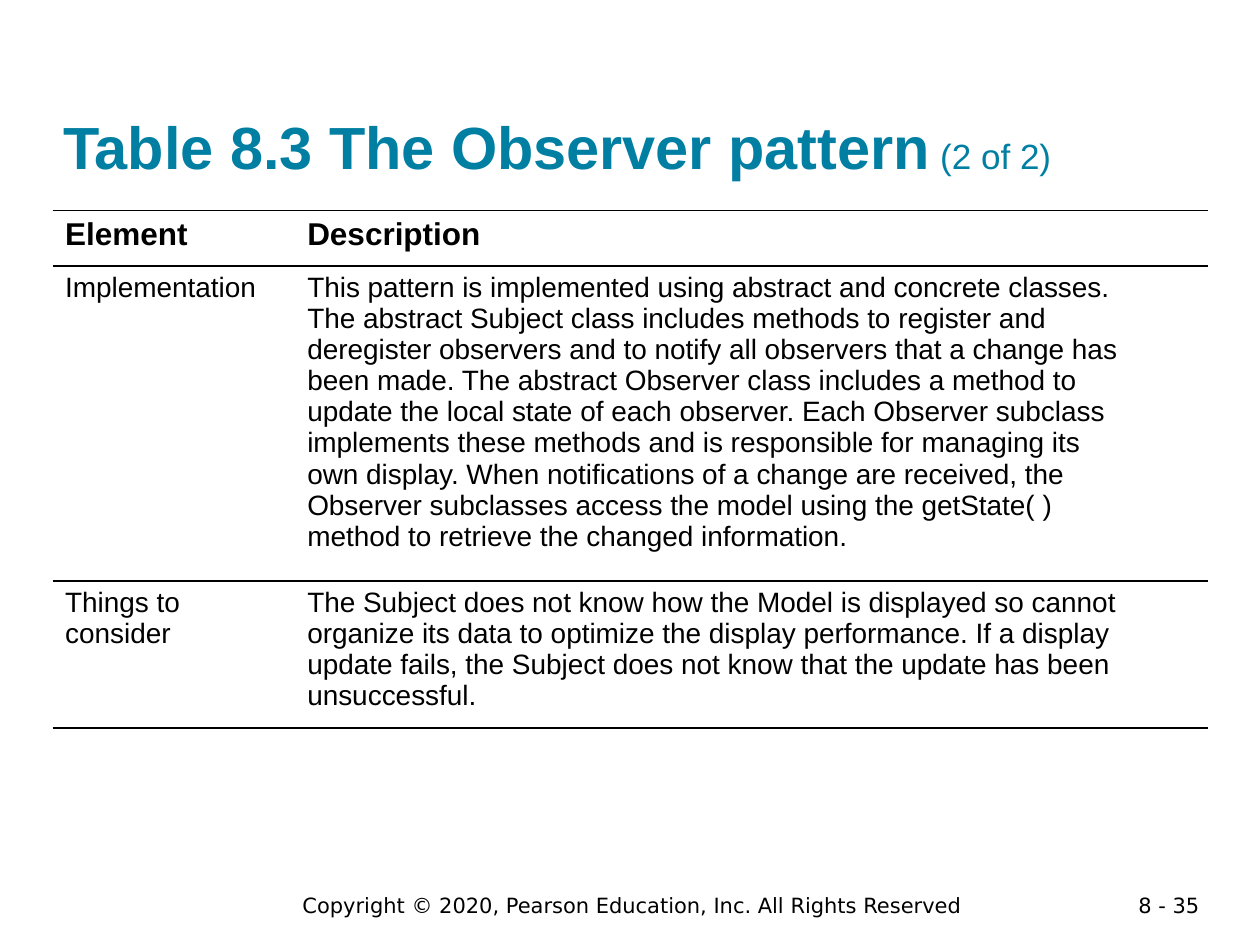
from lxml.etree import SubElement
from pptx import Presentation
from pptx.dml.color import RGBColor
from pptx.enum.text import MSO_ANCHOR as ANCHOR, MSO_AUTO_SIZE as FIT, PP_ALIGN as ALIGN
from pptx.oxml.ns import qn
from pptx.util import Cm, Pt

BLACK = RGBColor(0x00, 0x00, 0x00)
TEAL = RGBColor(0x00, 0x7F, 0xA3)

COL_WIDTHS = [4.88, 18.41]
ROW_HEIGHTS = [1.12, 5.9, 2.76]
ROWS = [
    (["Element"], ["Description"]),
    (["Implementation"], [
        "This pattern is implemented using abstract and concrete classes.",
        "The abstract Subject class includes methods to register and",
        "deregister observers and to notify all observers that a change has",
        "been made. The abstract Observer class includes a method to",
        "update the local state of each observer. Each Observer subclass",
        "implements these methods and is responsible for managing its",
        "own display. When notifications of a change are received, the",
        "Observer subclasses access the model using the getState( )",
        "method to retrieve the changed information.",
    ]),
    (["Things to consider"], [
        "The Subject does not know how the Model is displayed so cannot",
        "organize its data to optimize the display performance. If a display",
        "update fails, the Subject does not know that the update has been",
        "unsuccessful.",
    ]),
]


def add_text(p, text, size=16, font="Arial", color=BLACK, bold=False, align=ALIGN.LEFT):
    p.alignment = align
    r = p.add_run()
    r.text = text
    r.font.size = Pt(size)
    r.font.name = font
    r.font.bold = bold
    r.font.color.rgb = color


def set_title(s):
    title = s.shapes.title
    title.left, title.top, title.width, title.height = Cm(1.27), Cm(0.61), Cm(22.86), Cm(3.05)
    tf = title.text_frame
    tf.auto_size = FIT.NONE
    tf.vertical_anchor = ANCHOR.BOTTOM
    tf.margin_left = tf.margin_top = tf.margin_right = tf.margin_bottom = 0
    p = tf.paragraphs[0]
    add_text(p, "Table 8.3 The Observer pattern", size=34, color=TEAL, bold=True)
    add_text(p, " ", size=20, color=TEAL, bold=True)
    add_text(p, "(2 of 2)", size=20, color=TEAL)


def set_borders(cell):
    tc_pr = cell._tc.get_or_add_tcPr()
    for side in ("L", "R", "T", "B"):
        ln = SubElement(tc_pr, qn(f"a:ln{side}"), w=str(Pt(1)))
        if side in "LR":
            SubElement(ln, qn("a:noFill"))
        else:
            fill = SubElement(ln, qn("a:solidFill"))
            SubElement(fill, qn("a:srgbClr"), val=str(BLACK))


def fill_cell(cell, lines, **style):
    set_borders(cell)
    cell.fill.background()
    tf = cell.text_frame
    for i, line in enumerate(lines):
        p = tf.add_paragraph() if i else tf.paragraphs[0]
        add_text(p, line, **style)


def add_pattern_table(s):
    table = s.shapes.add_table(len(ROWS), len(COL_WIDTHS), Cm(1.06), Cm(4.24),
                               Cm(sum(COL_WIDTHS)), Cm(sum(ROW_HEIGHTS))).table
    table.first_row = table.horz_banding = False
    for col, width in zip(table.columns, COL_WIDTHS):
        col.width = Cm(width)
    for i, (row, height) in enumerate(zip(table.rows, ROW_HEIGHTS)):
        row.height = Cm(height)
        style = {"size": 16} if i else {"size": 18, "bold": True}
        for cell, lines in zip(row.cells, ROWS[i]):
            fill_cell(cell, lines, **style)


def add_footer(s, text, left, width, height, align):
    tf = s.shapes.add_textbox(Cm(left), Cm(17.86), Cm(width), Cm(height)).text_frame
    tf.word_wrap = True
    add_text(tf.paragraphs[0], text, size=12, font="DejaVu Sans", align=align)


def main():
    prs = Presentation()
    prs.slide_width, prs.slide_height = Cm(25.4), Cm(19.05)
    s = prs.slides.add_slide(prs.slide_layouts[5])
    add_footer(s, "8 - 35", 21.89, 2.54, 0.56, ALIGN.RIGHT)
    add_footer(s, "Copyright © 2020, Pearson Education, Inc. All Rights Reserved",
               4.17, 17.15, 0.76, ALIGN.CENTER)
    add_pattern_table(s)
    set_title(s)
    prs.save("out.pptx")


if __name__ == "__main__":
    main()
